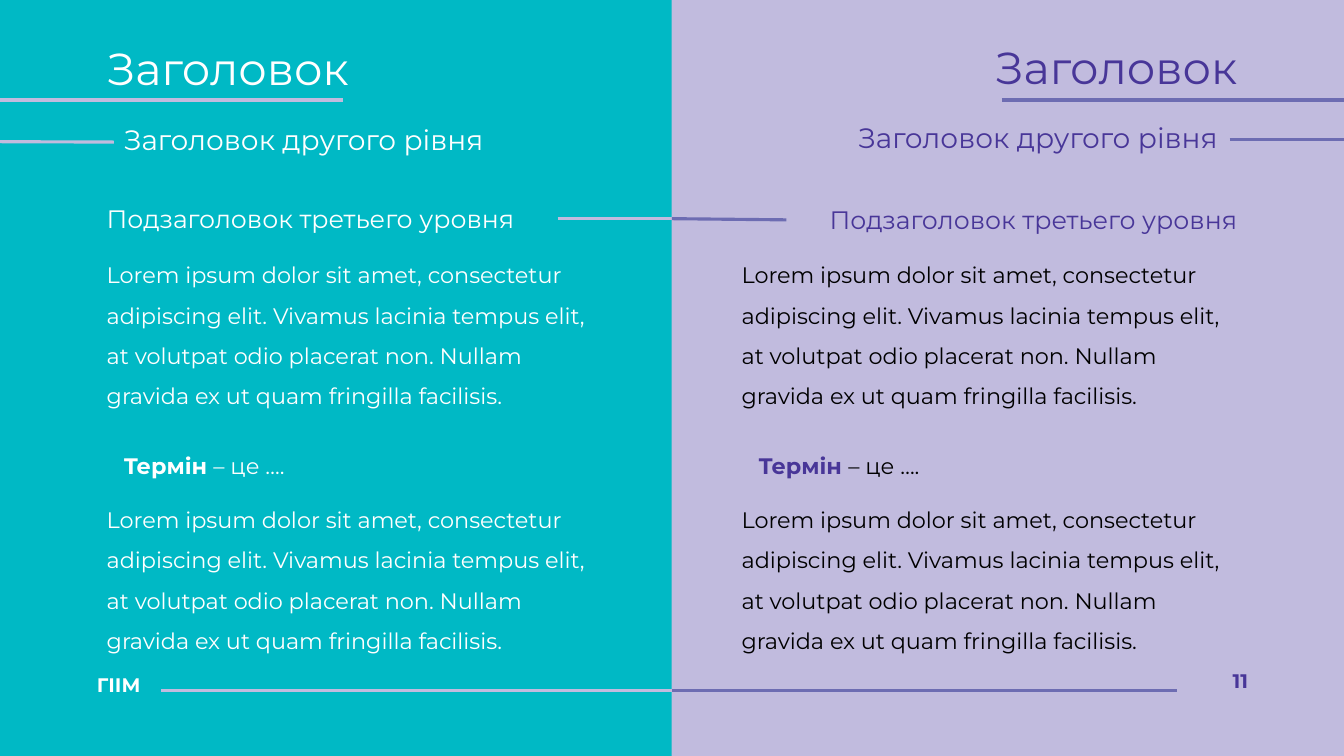
"""Builds a two-tone sample slide showing heading levels, body text and a term."""
from lxml.etree import SubElement
from pptx import Presentation
from pptx.dml.color import RGBColor
from pptx.enum.shapes import MSO_CONNECTOR, MSO_SHAPE
from pptx.enum.text import MSO_ANCHOR, MSO_AUTO_SIZE, PP_ALIGN
from pptx.oxml.ns import qn
from pptx.util import Cm, Pt

TEAL = RGBColor(0x00, 0xB9, 0xC5)
LILAC = RGBColor(0xC1, 0xBB, 0xDE)
VIOLET = RGBColor(0x6D, 0x6C, 0xB2)
INDIGO = RGBColor(0x48, 0x36, 0x98)
WHITE = RGBColor(0xFF, 0xFF, 0xFF)
BLACK = RGBColor(0x00, 0x00, 0x00)

FONT = "Montserrat"
WIDTH, HEIGHT, MIDDLE = 33.87, 19.05, 16.93
MARGIN, INDENT, HALF_STEP = 2.44, 2.87, 16
LEFT, RIGHT = PP_ALIGN.LEFT, PP_ALIGN.RIGHT

HEADING = "Заголовок"
SECOND_LEVEL = "Заголовок другого рівня"
THIRD_LEVEL = "Подзаголовок третьего уровня"
TERM, MEANING = "Термін ", "– це …."
LOREM = ("Lorem ipsum dolor sit amet, consectetur adipiscing elit. "
         "Vivamus lacinia tempus elit, at volutpat odio placerat non. "
         "Nullam gravida ex ut quam fringilla facilisis.")


def style_run(run, size, color, bold=False):
    run.font.name = FONT
    run.font.size = Pt(size)
    run.font.bold = bold
    run.font.color.rgb = color


def fill_text(shape, text, size, color, align=LEFT, spacing=1.0, bold=False):
    frame = shape.text_frame
    frame.word_wrap = True
    frame.auto_size = MSO_AUTO_SIZE.SHAPE_TO_FIT_TEXT
    frame.vertical_anchor = MSO_ANCHOR.TOP
    frame.text = text
    paragraph = frame.paragraphs[0]
    paragraph.alignment = align
    paragraph.line_spacing = spacing
    paragraph.space_before = Pt(0)
    style_run(paragraph.runs[0], size, color, bold)


def add_text(slide, place, text, size, color, **options):
    box = slide.shapes.add_textbox(*map(Cm, place))
    fill_text(box, text, size, color, **options)
    return box


def place_title(slide, place, text, size, color, **options):
    title = slide.shapes.title
    title.left, title.top, title.width, title.height = map(Cm, place)
    fill_text(title, text, size, color, **options)


def add_term(slide, left, term_color, meaning_color):
    box = add_text(slide, (left, 11.28, 12.55, 0.94), TERM, 16, term_color, bold=True)
    meaning = box.text_frame.paragraphs[0].add_run()
    meaning.text = MEANING
    style_run(meaning, 16, meaning_color)


def add_footer(slide, place, text, color, align):
    footer = add_text(slide, place, text, 14, color, align=align, bold=True)
    frame = footer.text_frame
    frame.vertical_anchor = MSO_ANCHOR.BOTTOM
    frame.margin_left = frame.margin_right = frame.margin_top = frame.margin_bottom = 0


def add_rule(slide, start, end, y, color, weight=2.25):
    rule = slide.shapes.add_connector(
        MSO_CONNECTOR.STRAIGHT, Cm(start), Cm(y), Cm(end), Cm(y))
    rule.line.color.rgb = color
    rule.line.width = Pt(weight)
    SubElement(rule._element.spPr, qn("a:effectLst"))
    return rule


def add_panel(slide):
    panel = slide.shapes.add_shape(MSO_SHAPE.RECTANGLE, 0, 0, Cm(MIDDLE), Cm(HEIGHT))
    panel.shadow.inherit = False
    panel.fill.solid()
    panel.fill.fore_color.rgb = TEAL
    panel.line.fill.background()


def add_body(slide, offset, term_color, body_color):
    for top in (6.13, 12.29):
        add_text(slide, (MARGIN + offset, top, 13, 4.24), LOREM, 16, body_color, spacing=1.5)
    add_term(slide, INDENT + offset, term_color, body_color)


def add_left_half(slide):
    place_title(slide, (MARGIN, 1.04, 14.5, 1.5), HEADING, 32, WHITE, spacing=0.9)
    add_rule(slide, 0, 8.64, 2.52, LILAC)
    second = add_text(slide, (INDENT, 3.07, 12.55, 1.02), SECOND_LEVEL, 20, WHITE, spacing=0.9)
    add_rule(slide, 0, INDENT, 3.57, LILAC).end_connect(second, 1)
    third = add_text(slide, (MARGIN, 5, 11.61, 1.02), THIRD_LEVEL, 18, WHITE)
    add_rule(slide, 14.05, MIDDLE, 5.51, LILAC).begin_connect(third, 3)
    add_body(slide, 0, WHITE, WHITE)
    add_rule(slide, 4.06, MIDDLE, 17.4, LILAC, 1.5)
    add_footer(slide, (MARGIN, 16.94, 11.43, 0.61), "ГІІМ", WHITE, LEFT)


def add_right_half(slide):
    add_text(slide, (MIDDLE, 1.04, 14.5, 1.5), HEADING, 32, INDIGO, align=RIGHT, spacing=0.9)
    add_rule(slide, 25.25, WIDTH, 2.52, VIOLET)
    add_text(slide, (18.44, 3.02, 12.5, 1.02), SECOND_LEVEL, 20, INDIGO,
             align=RIGHT, spacing=0.9)
    add_rule(slide, 30.99, WIDTH, 3.52, VIOLET)
    third = add_text(slide, (19.82, 5.03, 11.61, 1.02), THIRD_LEVEL, 18, INDIGO, align=RIGHT)
    add_rule(slide, 19.82, MIDDLE, 5.51, VIOLET).begin_connect(third, 1)
    add_body(slide, HALF_STEP, INDIGO, BLACK)
    add_rule(slide, MIDDLE, 29.67, 17.4, VIOLET, 1.5)
    add_footer(slide, (23.83, 16.84, 7.62, 0.61), "11", INDIGO, RIGHT)


def main():
    deck = Presentation()
    deck.slide_width, deck.slide_height = Cm(WIDTH), Cm(HEIGHT)
    slide = deck.slides.add_slide(deck.slide_layouts[5])
    slide.background.fill.solid()
    slide.background.fill.fore_color.rgb = LILAC
    add_panel(slide)
    title = slide.shapes.title._element
    title.getparent().append(title)
    add_left_half(slide)
    add_right_half(slide)
    deck.save("out.pptx")


if __name__ == "__main__":
    main()
